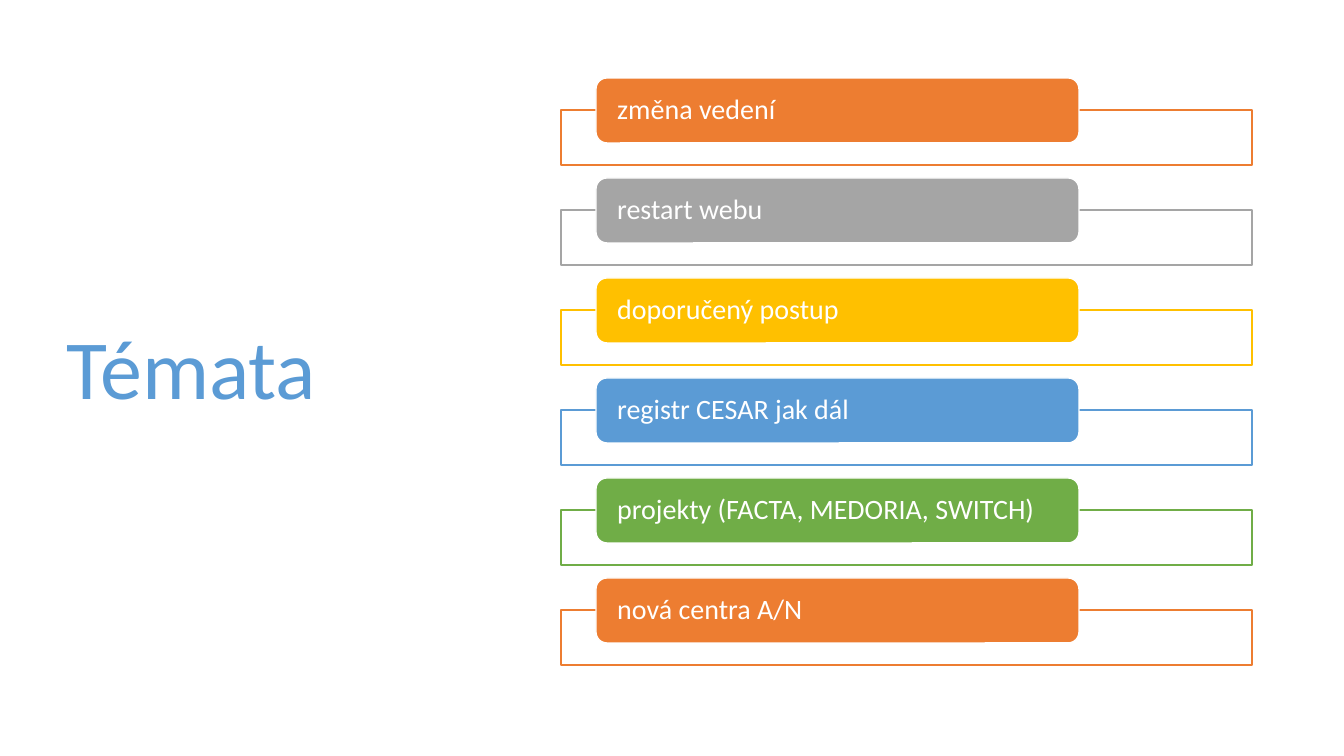
from lxml.etree import SubElement
from pptx import Presentation
from pptx.dml.color import RGBColor
from pptx.enum.shapes import MSO_SHAPE as Shape
from pptx.enum.text import MSO_ANCHOR as Anchor, PP_ALIGN as Align
from pptx.oxml.ns import qn
from pptx.util import Pt

WHITE = RGBColor(0xFF, 0xFF, 0xFF)
ORANGE = RGBColor(0xED, 0x7D, 0x31)
GRAY = RGBColor(0xA5, 0xA5, 0xA5)
GOLD = RGBColor(0xFF, 0xC0, 0x00)
BLUE = RGBColor(0x5B, 0x9B, 0xD5)
GREEN = RGBColor(0x70, 0xAD, 0x47)

SLIDE_WIDTH, SLIDE_HEIGHT = 1344, 756
EMU_PER_PX = 12192000 / SLIDE_WIDTH
FIRST_TOP, TOPIC_PITCH = 78, 100

TOPICS = [
    ("změna vedení", ORANGE),
    ("restart webu", GRAY),
    ("doporučený postup", GOLD),
    ("registr CESAR jak dál", BLUE),
    ("projekty (FACTA, MEDORIA, SWITCH)", GREEN),
    ("nová centra A/N", ORANGE),
]


def px(length):
    return round(length * EMU_PER_PX)


class TopicSlide:
    """Draw the elements of a topic list on one slide in a common style."""

    font = "Calibri"

    def __init__(self, slide):
        self.shapes = slide.shapes

    def set_text(self, holder, text, size, color, side_inset, end_inset):
        frame = holder.text_frame
        frame_format = {
            "word_wrap": True,
            "vertical_anchor": Anchor.MIDDLE,
            "margin_left": px(side_inset),
            "margin_right": px(side_inset),
            "margin_top": px(end_inset),
            "margin_bottom": px(end_inset),
        }
        for name, value in frame_format.items():
            setattr(frame, name, value)
        paragraph = frame.paragraphs[0]
        paragraph.alignment = Align.LEFT
        paragraph.line_spacing = 0.9
        run = paragraph.add_run()
        run.text = text
        for name, value in {"name": self.font, "size": Pt(size)}.items():
            setattr(run.font, name, value)
        run.font.color.rgb = color

    def title(self, text, box):
        heading = self.shapes.add_textbox(*map(px, box))
        self.set_text(heading, text, 60, BLUE, 10, 5)

    def block(self, kind, box, fill, line):
        block = self.shapes.add_shape(kind, *map(px, box))
        block.shadow.inherit = False
        block.fill.solid()
        block.fill.fore_color.rgb = fill
        block.line.color.rgb = line
        block.line.width = Pt(1)
        return block

    def frame(self, box, line):
        frame = self.block(Shape.RECTANGLE, box, WHITE, line)
        tint = frame.element.spPr.find(qn("a:solidFill"))[0]
        SubElement(tint, qn("a:alpha"), val="90000")

    def label(self, text, box, fill):
        label = self.block(Shape.ROUNDED_RECTANGLE, box, fill, WHITE)
        self.set_text(label, text, 20, WHITE, 18, 0)

    def topic(self, text, color, top):
        self.frame((561, top + 32, 691, 55), color)
        self.label(text, (596, top, 483, 65), color)


def main():
    deck = Presentation()
    deck.slide_width, deck.slide_height = px(SLIDE_WIDTH), px(SLIDE_HEIGHT)
    page = TopicSlide(deck.slides.add_slide(deck.slide_layouts[6]))
    page.title("Témata", (57, 69, 419, 607))
    for index, (text, color) in enumerate(TOPICS):
        page.topic(text, color, FIRST_TOP + index * TOPIC_PITCH)
    deck.save("out.pptx")


if __name__ == "__main__":
    main()
